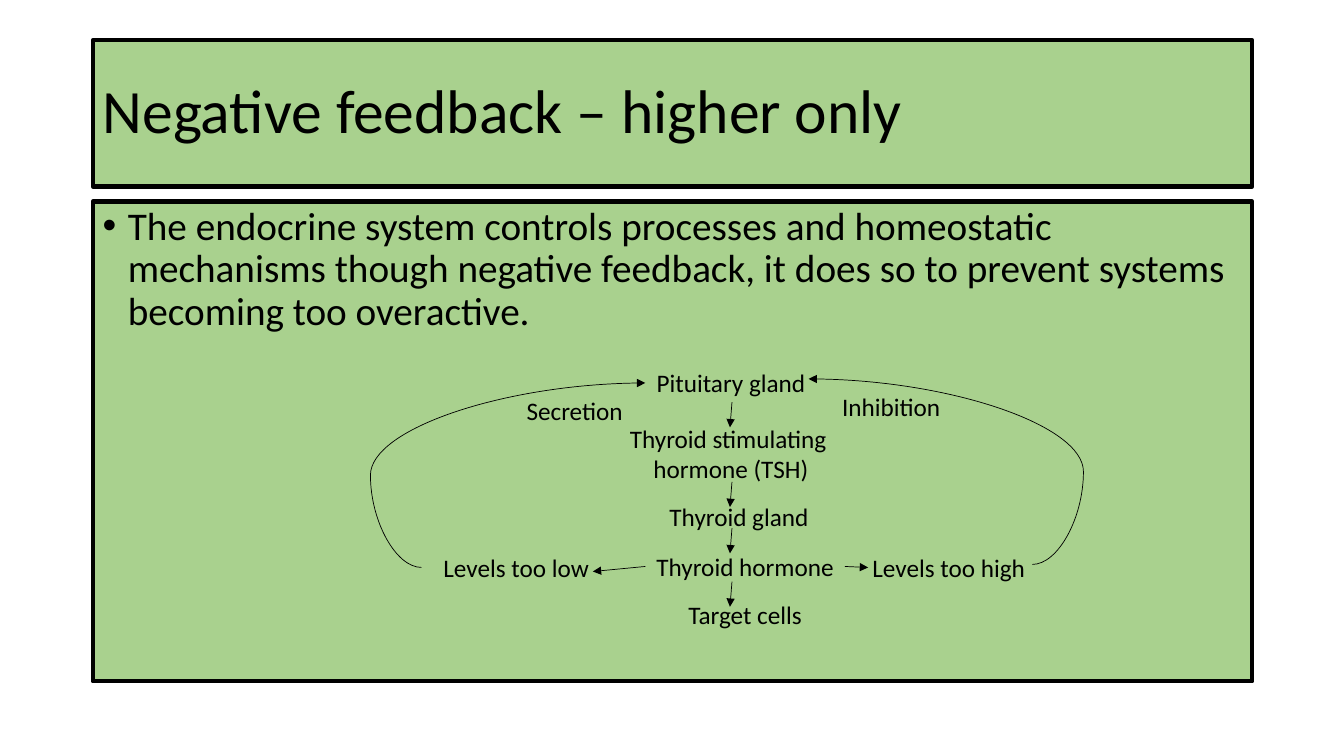
import pptx
import pptx.util
import pptx.dml.color
import pptx.enum.shapes
import pptx.enum.text
import pptx.oxml.ns
from lxml import etree

Inches, Pt = pptx.util.Inches, pptx.util.Pt
ANCHOR, ALIGN = pptx.enum.text.MSO_ANCHOR, pptx.enum.text.PP_ALIGN
CONNECTOR = pptx.enum.shapes.MSO_CONNECTOR
qn = pptx.oxml.ns.qn

COLOURS = {"panel": "A9D18E", "ink": "000000"}
FORMATS = {
    "title": {"name": "Calibri", "size": Pt(44)},
    "body": {"name": "Calibri", "size": Pt(28)},
    "label": {"name": "Calibri", "size": Pt(18)},
}

# Boxes are left, top, width, height in inches
TITLE_BOX = (0.92, 0.4, 11.5, 1.45)
BODY_BOX = (0.92, 2, 11.5, 4.76)

# Text, centre, top, width; all relative to the body box
LABELS = [
    ("Pituitary gland", 6.33, 1.59, 1.69),
    ("Thyroid stimulating \nhormone (TSH)", 6.33, 2.15, 2.23),
    ("Thyroid gland", 6.41, 2.92, 1.6),
    ("Thyroid hormone", 6.47, 3.42, 1.98),
    ("Target cells", 6.47, 3.9, 1.34),
    ("Levels too high", 8.49, 3.43, 1.73),
    ("Levels too low", 4.2, 3.43, 1.66),
    ("Secretion", 4.78, 1.87, 1.17),
    ("Inhibition", 7.92, 1.83, 1.19),
]
FEEDBACK_LOOPS = [((3.26, 3.63), (5.48, 1.8)), ((9.32, 3.6), (7.1, 1.76))]
LOOP_BULGE = -22800
CASCADE_TOPS = [1.99, 2.78, 3.24, 3.77]
CASCADE_STEPS = [((6.34, top), (6.32, top + 0.25)) for top in CASCADE_TOPS]
LEVEL_BRANCHES = [((5.48, 3.62), (4.96, 3.67)), ((7.46, 3.62), (7.69, 3.63))]


def colour(name):
    return pptx.dml.color.RGBColor.from_string(COLOURS[name])


def write(paragraph, text, style):
    words = paragraph.add_run()
    words.text = text
    for attribute, value in FORMATS[style].items():
        setattr(words.font, attribute, value)
    words.font.color.rgb = colour("ink")


def add_panel(slide, box, text, style, anchor):
    panel = slide.shapes.add_shape(
        pptx.enum.shapes.MSO_SHAPE.RECTANGLE, *map(Inches, box))
    panel.shadow.inherit = False
    panel.fill.solid()
    panel.fill.fore_color.rgb = colour("panel")
    panel.line.color.rgb = colour("ink")
    panel.line.width = Pt(3)
    panel.text_frame.word_wrap = True
    panel.text_frame.vertical_anchor = anchor
    paragraph = panel.text_frame.paragraphs[0]
    paragraph.alignment = ALIGN.LEFT
    paragraph.line_spacing = 0.9
    write(paragraph, text, style)
    return paragraph


def add_title(slide, box):
    add_panel(slide, box, "Negative feedback – higher only", "title", ANCHOR.MIDDLE)


def add_body(slide, box):
    statement = add_panel(
        slide, box,
        "The endocrine system controls processes and homeostatic mechanisms "
        "though negative feedback, it does so to prevent systems becoming "
        "too overactive.", "body", ANCHOR.TOP)
    statement.space_before = Pt(10)
    # Bullet with hanging indent
    properties = statement._p.get_or_add_pPr()
    properties.set("marL", str(Inches(0.25)))
    properties.set("indent", str(-Inches(0.25)))
    etree.SubElement(properties, qn("a:buFont"), typeface="Arial")
    etree.SubElement(properties, qn("a:buChar"), char="•")


def add_label(slide, text, centre, top, width):
    lines = text.split("\n")
    label = slide.shapes.add_textbox(
        *map(Inches, (centre - width / 2, top, width, 0.1 + 0.3 * len(lines))))
    frame = label.text_frame
    frame.word_wrap = False
    frame.auto_size = pptx.enum.text.MSO_AUTO_SIZE.SHAPE_TO_FIT_TEXT
    for number, line in enumerate(lines):
        paragraph = frame.add_paragraph() if number else frame.paragraphs[0]
        paragraph.alignment = ALIGN.CENTER
        write(paragraph, line, "label")


def add_arrow(slide, kind, start, end):
    arrow = slide.shapes.add_connector(kind, *map(Inches, (*start, *end)))
    arrow.line.color.rgb = colour("ink")
    arrow.line.width = Pt(0.5)
    properties = arrow._element.spPr
    etree.SubElement(properties.find(qn("a:ln")), qn("a:tailEnd"), type="triangle")
    etree.SubElement(properties, qn("a:effectLst"))
    if kind == CONNECTOR.CURVE:
        adjustments = properties.find(qn("a:prstGeom")).get_or_add_avLst()
        etree.SubElement(adjustments, qn("a:gd"), name="adj1", fmla=f"val {LOOP_BULGE}")


def add_feedback_diagram(slide, box):
    left, top = box[:2]
    for text, centre, label_top, width in LABELS:
        add_label(slide, text, left + centre, top + label_top, width)
    for kind, routes in ((CONNECTOR.CURVE, FEEDBACK_LOOPS),
                         (CONNECTOR.STRAIGHT, CASCADE_STEPS + LEVEL_BRANCHES)):
        for route in routes:
            start, end = [(left + x, top + y) for x, y in route]
            add_arrow(slide, kind, start, end)


def main():
    deck = pptx.Presentation()
    deck.slide_width, deck.slide_height = Inches(13.33), Inches(7.5)
    slide = deck.slides.add_slide(deck.slide_layouts[6])
    add_title(slide, TITLE_BOX)
    add_body(slide, BODY_BOX)
    add_feedback_diagram(slide, BODY_BOX)
    deck.save("out.pptx")


if __name__ == "__main__":
    main()
